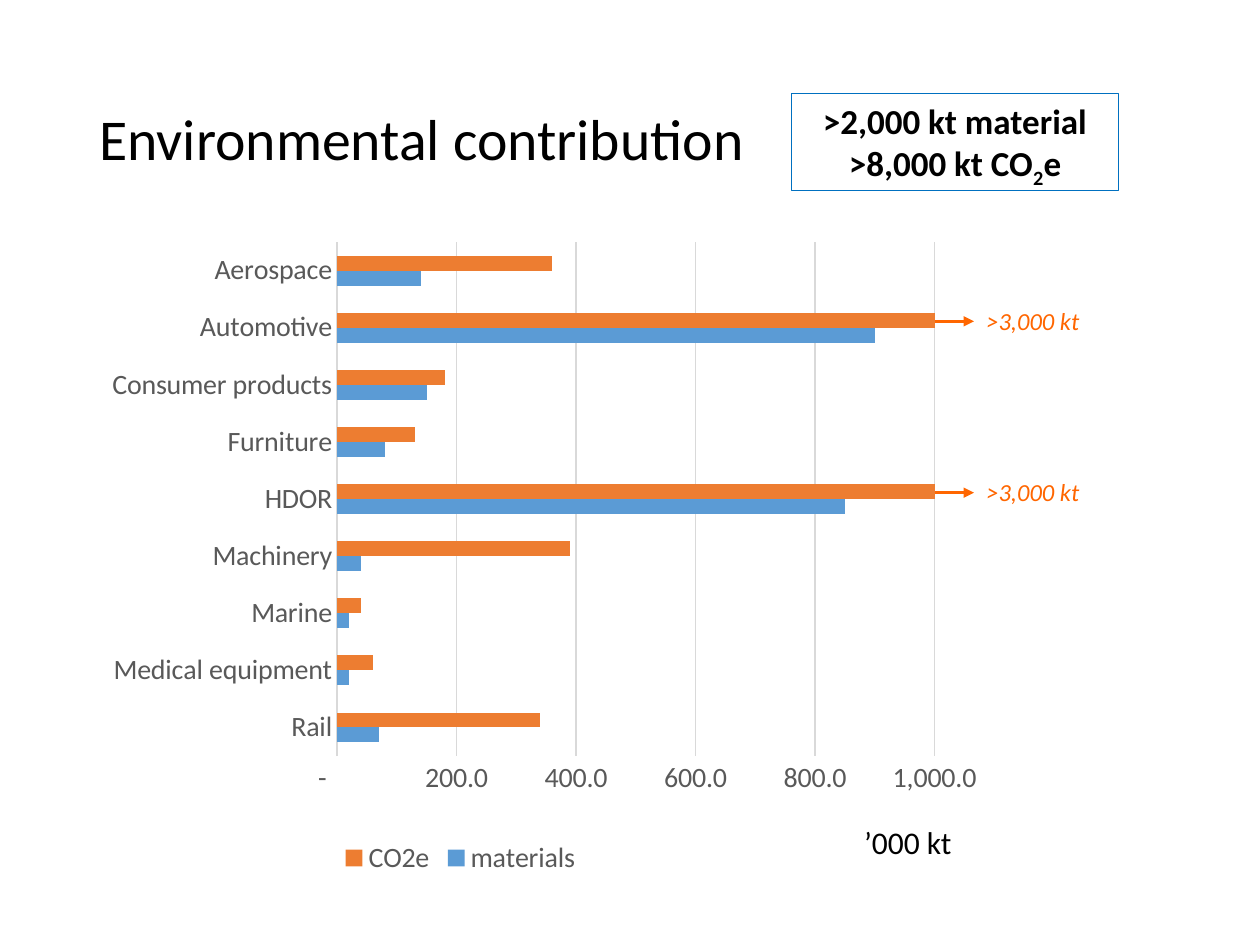
from lxml.etree import SubElement
from pptx import Presentation
from pptx.chart.data import CategoryChartData
from pptx.dml.color import RGBColor
from pptx.enum.chart import XL_CHART_TYPE as ChartType
from pptx.enum.chart import XL_LEGEND_POSITION as LegendPosition
from pptx.enum.chart import XL_TICK_MARK as TickMark
from pptx.enum.shapes import MSO_CONNECTOR as Connector
from pptx.enum.shapes import MSO_SHAPE as Shape
from pptx.enum.text import MSO_ANCHOR as Anchor
from pptx.enum.text import MSO_AUTO_SIZE as AutoSize
from pptx.enum.text import PP_ALIGN as Align
from pptx.oxml import parse_xml
from pptx.oxml.ns import nsdecls, qn
from pptx.util import Emu, Pt

EMU_PER_PX = 9144  # 100 px to the inch
FONT = "Calibri"
BLACK, GREY, PALE = "000000", "595959", "D9D9D9"
BLUE, ORANGE, ARROW, BORDER = "5B9BD5", "ED7D31", "FF6600", "0070C0"

CATEGORIES = ["Rail", "Medical equipment", "Marine", "Machinery", "HDOR",
              "Furniture", "Consumer products", "Automotive", "Aerospace"]
SERIES = [
    ("materials", BLUE, [70, 20, 20, 40, 850, 80, 150, 900, 140]),
    ("CO2e", ORANGE, [340, 60, 40, 390, 3460, 130, 180, 3300, 360]),
]
NUMBER_FORMAT = '_-* #,##0.0_-;\\-* #,##0.0_-;_-* "-"??_-;'
PLOT_LAYOUT = {"x": 0.386, "y": 0.031, "w": 0.552, "h": 0.78}


def px(*lengths):
    return [Emu(length * EMU_PER_PX) for length in lengths]


def color(hex_string):
    return RGBColor.from_string(hex_string)


def set_values(target, values):
    for name, value in values.items():
        setattr(target, name, value)


def set_font(font, size, hex_string, **values):
    set_values(font, {"name": FONT, "size": Pt(size), **values})
    font.color.rgb = color(hex_string)


def set_line(line, hex_string, width):
    line.color.rgb = color(hex_string)
    line.width = Pt(width)


def add_text(slide, box, text, size, hex_string=BLACK, align=Align.LEFT,
             frame_values=None, **font_values):
    shape = slide.shapes.add_textbox(*px(*box))
    set_values(shape.text_frame, {"word_wrap": True, **(frame_values or {})})
    paragraph = shape.text_frame.paragraphs[0]
    paragraph.alignment = align
    run = paragraph.add_run()
    run.text = text
    set_font(run.font, size, hex_string, **font_values)
    return shape


def add_title(slide, box):
    title = add_text(slide, box, "Environmental contribution", 33,
                     frame_values={"vertical_anchor": Anchor.MIDDLE})
    title.text_frame.paragraphs[0].line_spacing = 0.9


def add_totals(slide, box):
    shape = slide.shapes.add_shape(Shape.RECTANGLE, *px(*box))
    shape.shadow.inherit = False
    shape.fill.background()
    set_line(shape.line, BORDER, 0.75)
    frame = shape.text_frame
    set_values(frame, {"word_wrap": True, "vertical_anchor": Anchor.TOP,
                       "auto_size": AutoSize.SHAPE_TO_FIT_TEXT})
    lines = [[(">2,000 kt material", 0)],
             [(">8,000 kt CO", 0), ("2", -25000), ("e", 0)]]
    for index, parts in enumerate(lines):
        paragraph = frame.add_paragraph() if index else frame.paragraphs[0]
        paragraph.alignment = Align.CENTER
        for text, baseline in parts:
            run = paragraph.add_run()
            run.text = text
            set_font(run.font, 20, BLACK, bold=True)
            if baseline:
                run.font._element.set("baseline", str(baseline))


def set_plot_layout(chart):
    plot_area = chart._chartSpace.chart.plotArea
    for old in plot_area.findall(qn("c:layout")):
        plot_area.remove(old)
    layout = parse_xml(f"<c:layout {nsdecls('c')}/>")
    manual = SubElement(layout, qn("c:manualLayout"))
    settings = {"layoutTarget": "inner", "xMode": "edge", "yMode": "edge",
                **PLOT_LAYOUT}
    for name, value in settings.items():
        SubElement(manual, qn(f"c:{name}")).set("val", str(value))
    plot_area.insert(0, layout)


def add_bar_chart(slide, box):
    data = CategoryChartData()
    data.categories = CATEGORIES
    for name, _, values in SERIES:
        data.add_series(name, values)
    chart = slide.shapes.add_chart(
        ChartType.BAR_CLUSTERED, *px(*box), data).chart
    set_values(chart, {"has_title": False, "has_legend": True})
    set_font(chart.font, 16, BLACK)
    set_plot_layout(chart)

    # Bars
    plot = chart.plots[0]
    set_values(plot, {"gap_width": 182, "vary_by_categories": False})
    for series, (_, hex_string, _) in zip(plot.series, SERIES):
        series.format.fill.solid()
        series.format.fill.fore_color.rgb = color(hex_string)

    # Axes
    categories, values = chart.category_axis, chart.value_axis
    for axis in (categories, values):
        set_values(axis, {"major_tick_mark": TickMark.NONE,
                          "minor_tick_mark": TickMark.NONE})
        set_font(axis.tick_labels.font, 16, GREY)
    set_line(categories.format.line, PALE, 0.75)
    set_values(values, {"minimum_scale": 0, "maximum_scale": 1000,
                        "major_unit": 200, "has_major_gridlines": True})
    values.format.line.fill.background()
    set_line(values.major_gridlines.format.line, PALE, 0.75)
    set_values(values.tick_labels, {"number_format": NUMBER_FORMAT,
                                    "number_format_is_linked": False})

    # Legend
    set_values(chart.legend, {"position": LegendPosition.BOTTOM,
                              "include_in_layout": False})
    set_font(chart.legend.font, 16, GREY)


def add_overflow_note(slide, box):
    """An arrow leading into a label for a bar that runs past the axis."""
    left, top, width, height = box
    arrow_length = 31
    label = add_text(slide,
                     (left + arrow_length, top, width - arrow_length, height),
                     ">3,000 kt", 14, ARROW, italic=True,
                     frame_values={"auto_size": AutoSize.SHAPE_TO_FIT_TEXT})
    middle = top + height // 2
    arrow = slide.shapes.add_connector(
        Connector.STRAIGHT, *px(left, middle, left + arrow_length, middle))
    arrow.end_connect(label, 1)
    set_line(arrow.line, ARROW, 1.5)
    SubElement(arrow.line._get_or_add_ln(), qn("a:tailEnd")).set(
        "type", "triangle")
    SubElement(arrow._element.spPr, qn("a:effectLst"))


def main():
    presentation = Presentation()
    width, height = px(1000, 750)
    set_values(presentation, {"slide_width": width, "slide_height": height})
    slide = presentation.slides.add_slide(presentation.slide_layouts[6])

    add_title(slide, (69, 40, 862, 145))
    add_bar_chart(slide, (-64, 176, 859, 523))
    add_text(slide, (650, 648, 141, 40), "’000 kt", 18, align=Align.CENTER,
             frame_values={"auto_size": AutoSize.SHAPE_TO_FIT_TEXT})
    add_totals(slide, (628, 74, 260, 77))
    for top in (238, 374):
        add_overflow_note(slide, (742, top, 173, 34))
    presentation.save("out.pptx")


if __name__ == "__main__":
    main()
